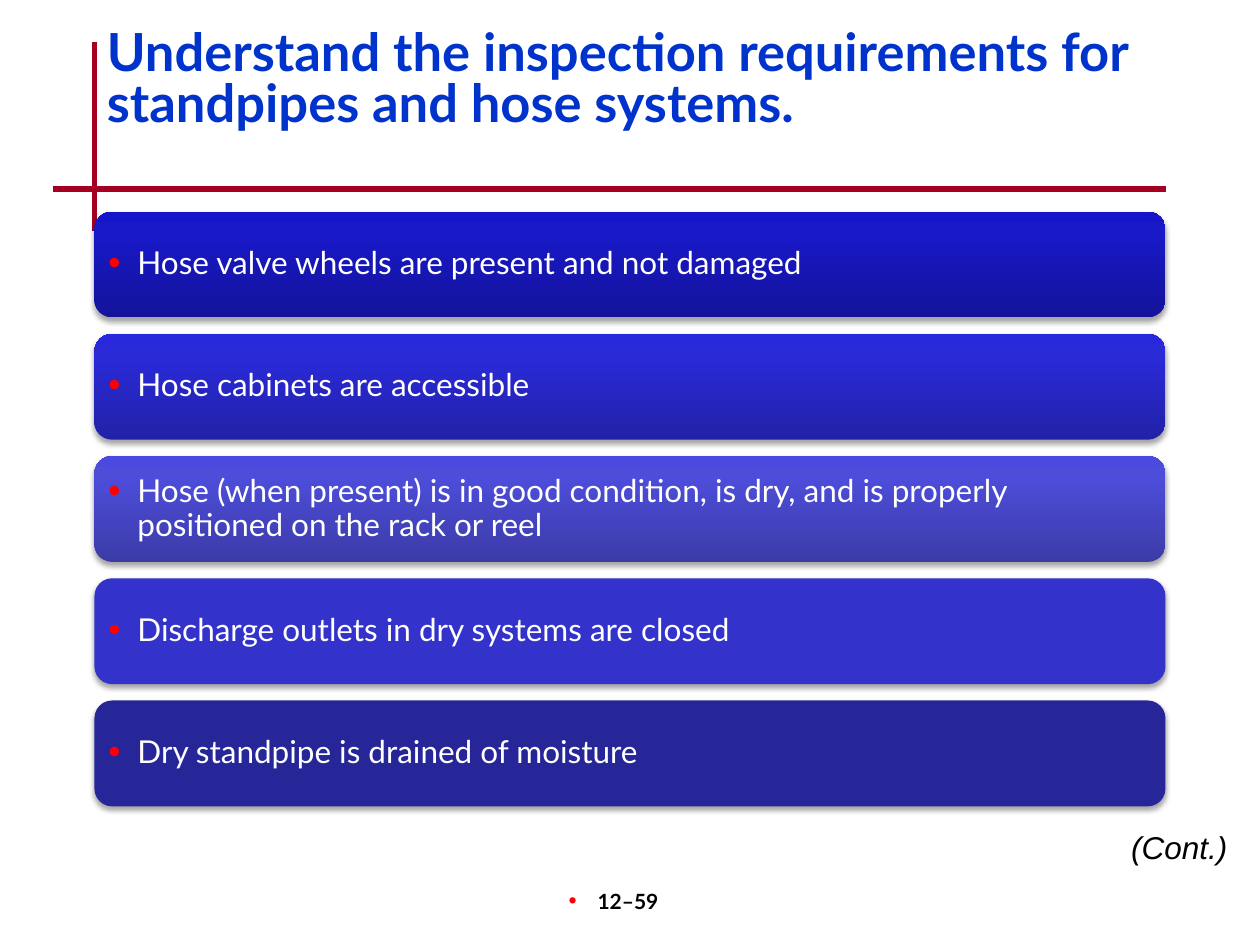
from copy import deepcopy

from pptx import Presentation
from pptx.dml.color import RGBColor
from pptx.enum.shapes import MSO_CONNECTOR, MSO_SHAPE
from pptx.enum.text import MSO_ANCHOR, PP_ALIGN
from pptx.oxml.ns import qn
from pptx.oxml.xmlchemy import OxmlElement
from pptx.util import Inches, Pt

STRAIGHT = MSO_CONNECTOR.STRAIGHT
ROUNDED = MSO_SHAPE.ROUNDED_RECTANGLE
TOP, MIDDLE = MSO_ANCHOR.TOP, MSO_ANCHOR.MIDDLE
LEFT, CENTER, RIGHT = PP_ALIGN.LEFT, PP_ALIGN.CENTER, PP_ALIGN.RIGHT

# Content
TITLE = "Understand the inspection requirements for standpipes and hose systems."
PAGE_NUMBER = "12–59"
CONTINUED = "(Cont.)"
# Each bar: text, colours from bottom to top
BARS = [
    ("Hose valve wheels are present and not damaged", ["13139A", "1919C8", "1515CC"]),
    ("Hose cabinets are accessible", ["2121A7", "2A2AD9", "2727DD"]),
    ("Hose (when present) is in good condition, is dry, and is properly "
     "positioned on the rack or reel", ["3B3BA8", "4D4DDA", "4A4ADE"]),
    ("Discharge outlets in dry systems are closed", ["3333CC"]),
    ("Dry standpipe is drained of moisture", ["262699"]),
]

# Format
COLORS = {"rule": "A50021", "title": "0033CC", "bullet": "FF0000",
          "bar_text": "FFFFFF", "text": "000000", "shadow": "000000"}
RULES = [(0.75, 0.33, 0.75, 1.83), (0.42, 1.5, 9.25, 1.5)]
STOPS = (0, 0.8, 1)
BAR_LEFT, BAR_TOP, BAR_WIDTH, BAR_HEIGHT, BAR_STEP = 0.75, 1.68, 8.5, 0.84, 0.97
BAR_INSET = 0.07
FONTS = {
    "title": {"name": "Lato", "size": Pt(30), "bold": True},
    "bar_text": {"name": "Lato", "size": Pt(18)},
    "page": {"name": "Lato", "size": Pt(12), "bold": True},
    "continued": {"name": "Arial", "size": Pt(18), "italic": True},
}


def add_element(parent, tag, **attributes):
    element = OxmlElement(tag)
    for name, value in attributes.items():
        element.set(name, str(value))
    parent.append(element)
    return element


def add_bullet(para, indent):
    properties = para._p.get_or_add_pPr()
    properties.set("marL", str(Inches(indent)))
    properties.set("indent", str(-Inches(indent)))
    color = add_element(properties, "a:buClr")
    add_element(color, "a:srgbClr", val=COLORS["bullet"])
    add_element(properties, "a:buSzPct", val=110000)
    add_element(properties, "a:buFont", typeface="Arial")
    add_element(properties, "a:buChar", char="•")


def write(shape, text, font, color, align=LEFT, anchor=TOP, spacing=None,
          indent=None, insets=None):
    frame = shape.text_frame
    frame.word_wrap = True
    frame.vertical_anchor = anchor
    for side, inset in (insets or {}).items():
        setattr(frame, f"margin_{side}", Inches(inset))
    para = frame.paragraphs[0]
    para.alignment = align
    if spacing:
        para.line_spacing = spacing
    if indent:
        add_bullet(para, indent)
    span = para.add_run()
    span.text = text
    for name, value in FONTS[font].items():
        setattr(span.font, name, value)
    span.font.color.rgb = RGBColor.from_string(COLORS[color])


def fill_bar(bar, colors):
    if len(colors) == 1:
        bar.fill.solid()
        bar.fill.fore_color.rgb = RGBColor.from_string(colors[0])
        return
    bar.fill.gradient()
    bar.fill.gradient_angle = 90
    stop_list = bar._element.spPr.find(".//" + qn("a:gsLst"))
    stop_list.append(deepcopy(stop_list[-1]))
    for stop, position, color in zip(bar.fill.gradient_stops, STOPS, colors):
        stop.position = position
        stop.color.rgb = RGBColor.from_string(color)


def add_shadow(bar):
    bar.shadow.inherit = False
    effects = bar._element.spPr.find(qn("a:effectLst"))
    shadow = add_element(effects, "a:outerShdw", blurRad=Pt(3.1), dist=Pt(1.8),
                         dir=90 * 60000, rotWithShape=0)
    color = add_element(shadow, "a:srgbClr", val=COLORS["shadow"])
    add_element(color, "a:alpha", val=35000)


deck = Presentation()
deck.slide_width, deck.slide_height = Inches(10), Inches(7.5)
page = deck.slides.add_slide(deck.slide_layouts[6])


def add_box(*place):
    return page.shapes.add_textbox(*map(Inches, place))


# Crossing rules
for ends in RULES:
    rule = page.shapes.add_connector(STRAIGHT, *map(Inches, ends))
    rule.line.color.rgb = RGBColor.from_string(COLORS["rule"])
    rule.line.width = Pt(3)
    add_element(rule._element.spPr, "a:effectLst")

# Page number and title
write(add_box(3.92, 7, 2.08, 0.5), PAGE_NUMBER, "page", "text", align=CENTER,
      indent=0.23, insets={"right": 0.28})
write(add_box(0.75, 0.2, 8.5, 1), TITLE, "title", "title", spacing=0.8)

# Bars
for index, (text, colors) in enumerate(BARS):
    place = (BAR_LEFT, BAR_TOP + index * BAR_STEP, BAR_WIDTH, BAR_HEIGHT)
    bar = page.shapes.add_shape(ROUNDED, *map(Inches, place))
    fill_bar(bar, colors)
    bar.line.fill.background()
    add_shadow(bar)
    write(bar, text, "bar_text", "bar_text", anchor=MIDDLE, spacing=0.9, indent=0.23,
          insets=dict.fromkeys(("left", "top", "right", "bottom"), BAR_INSET))

# Continuation mark
write(add_box(8.17, 6.52, 1.67, 0.4), CONTINUED, "continued", "text", align=RIGHT)

deck.save("out.pptx")
